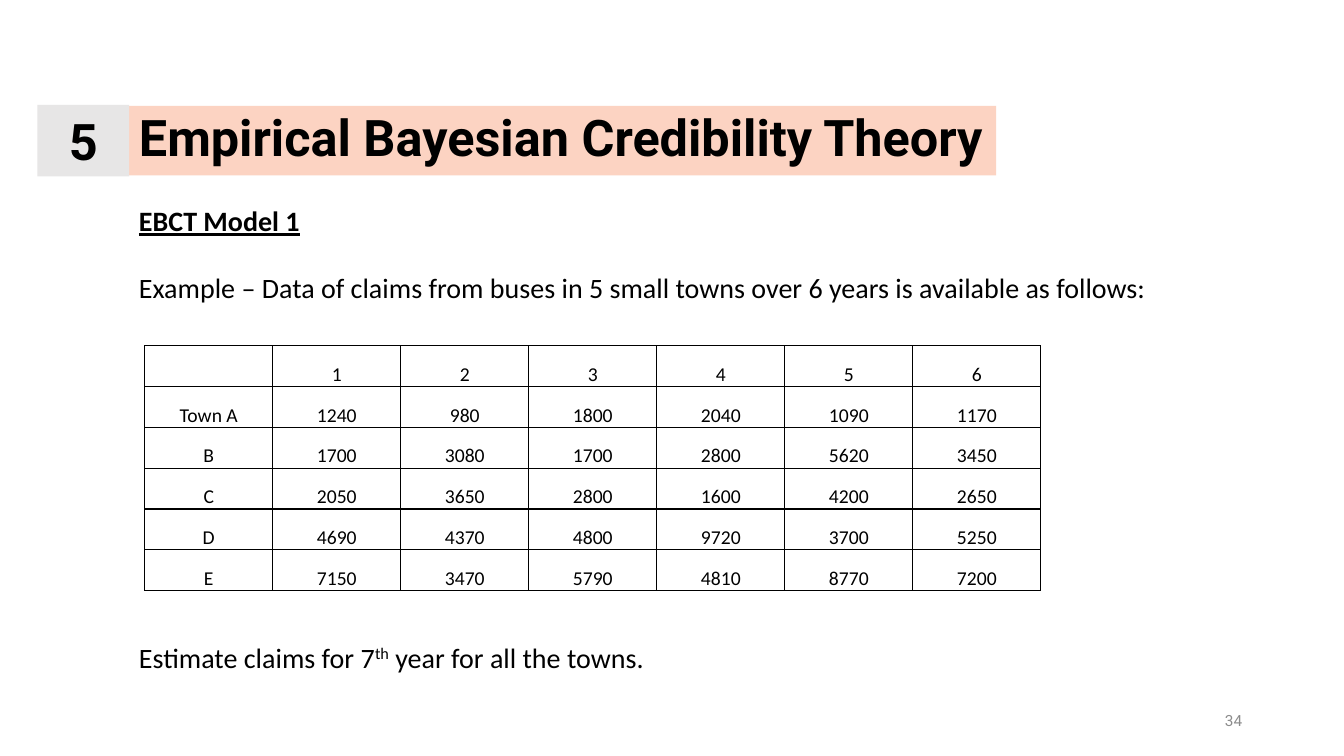
from lxml.etree import SubElement
from pptx import Presentation
from pptx.dml.color import RGBColor
from pptx.enum.shapes import MSO_SHAPE
from pptx.enum.text import MSO_ANCHOR, PP_ALIGN
from pptx.oxml.ns import qn
from pptx.util import Inches, Pt

SLIDE_WIDTH = Inches(13.33)
SLIDE_HEIGHT = Inches(7.5)
COLORS = {
    "text": "000000",
    "title_fill": "FCD3C2",
    "number_fill": "E7E6E6",
    "page_number": "8C8C8C",
    "border": "000000",
}
HEADING_FONT = "Roboto"
BODY_FONT = "Calibri"
BODY_LEFT = 9.6
CLAIMS = [
    ["", "1", "2", "3", "4", "5", "6"],
    ["Town A", "1240", "980", "1800", "2040", "1090", "1170"],
    ["B", "1700", "3080", "1700", "2800", "5620", "3450"],
    ["C", "2050", "3650", "2800", "1600", "4200", "2650"],
    ["D", "4690", "4370", "4800", "9720", "3700", "5250"],
    ["E", "7150", "3470", "5790", "4810", "8770", "7200"],
]


def across(percent):
    return round(SLIDE_WIDTH * percent / 100)


def down(percent):
    return round(SLIDE_HEIGHT * percent / 100)


def area(left, top, width, height):
    return across(left), down(top), across(width), down(height)


def color(name):
    return RGBColor.from_string(COLORS[name])


def add_run(paragraph, text, size, font=BODY_FONT, color_name="text", bold=False):
    run = paragraph.add_run()
    run.text = text
    run.font.size = Pt(size)
    run.font.name = font
    run.font.bold = bold
    run.font.color.rgb = color(color_name)
    return run


def add_heading_block(slide, position, text, fill, align, anchor):
    shape = slide.shapes.add_shape(MSO_SHAPE.RECTANGLE, *position)
    shape.shadow.inherit = False
    shape.fill.solid()
    shape.fill.fore_color.rgb = color(fill)
    shape.line.fill.background()
    shape.text_frame.word_wrap = True
    shape.text_frame.vertical_anchor = anchor
    paragraph = shape.text_frame.paragraphs[0]
    paragraph.alignment = align
    add_run(paragraph, text, 36, HEADING_FONT, bold=True)
    return paragraph


def add_text_box(slide, position, anchor=MSO_ANCHOR.TOP):
    frame = slide.shapes.add_textbox(*position).text_frame
    frame.word_wrap = True
    frame.vertical_anchor = anchor
    return frame


def add_body(slide):
    frame = add_text_box(slide, area(BODY_LEFT, 26.27, 83.57, 71.33))
    heading = add_run(frame.paragraphs[0], "EBCT Model 1", 20, bold=True)
    heading.font.underline = True

    example = frame.add_paragraph()
    example.space_before = Pt(24)
    add_run(
        example,
        "Example – Data of claims from buses in 5 small towns over 6 years "
        "is available as follows:",
        20,
    )

    question = frame.add_paragraph()
    question.space_before = Pt(240)
    add_run(question, "Estimate claims for 7", 20)
    ordinal = add_run(question, "th", 20)
    ordinal.font._element.set("baseline", "30000")
    add_run(question, " year for all the towns.", 20)


def add_page_number(slide):
    frame = add_text_box(slide, area(70.67, 92.67, 22.5, 5.33), MSO_ANCHOR.MIDDLE)
    paragraph = frame.paragraphs[0]
    paragraph.alignment = PP_ALIGN.RIGHT
    add_run(paragraph, "34", 11, HEADING_FONT, "page_number")


def add_borders(cell):
    properties = cell._tc.get_or_add_tcPr()
    for side in ("a:lnL", "a:lnR", "a:lnT", "a:lnB"):
        line = SubElement(properties, qn(side), w=str(Pt(1)))
        fill = SubElement(line, qn("a:solidFill"))
        SubElement(fill, qn("a:srgbClr"), val=COLORS["border"])


def format_cell(cell, text):
    add_borders(cell)
    cell.fill.background()
    cell.margin_left = cell.margin_right = cell.margin_top = Inches(0.01)
    cell.margin_bottom = 0
    cell.vertical_anchor = MSO_ANCHOR.BOTTOM
    paragraph = cell.text_frame.paragraphs[0]
    paragraph.alignment = PP_ALIGN.CENTER
    if text:
        add_run(paragraph, text, 14)


def add_claims_table(slide):
    position = area(10.77, 45.73, 66.69, 32.4)
    table = slide.shapes.add_table(len(CLAIMS), len(CLAIMS[0]), *position).table
    table.first_row = False
    table.horz_banding = False
    for row_index, values in enumerate(CLAIMS):
        for column_index, value in enumerate(values):
            format_cell(table.cell(row_index, column_index), value)


def main():
    presentation = Presentation()
    presentation.slide_width = SLIDE_WIDTH
    presentation.slide_height = SLIDE_HEIGHT
    slide = presentation.slides.add_slide(presentation.slide_layouts[6])

    title = add_heading_block(
        slide, area(BODY_LEFT, 14, 64.52, 9.2), "Empirical Bayesian Credibility Theory",
        "title_fill", PP_ALIGN.LEFT, MSO_ANCHOR.MIDDLE,
    )
    title.line_spacing = 0.9
    add_page_number(slide)
    add_heading_block(
        slide, area(2.78, 13.87, 6.83, 9.47), "5",
        "number_fill", PP_ALIGN.CENTER, MSO_ANCHOR.TOP,
    )
    add_body(slide)
    add_claims_table(slide)
    presentation.save("out.pptx")


if __name__ == "__main__":
    main()
